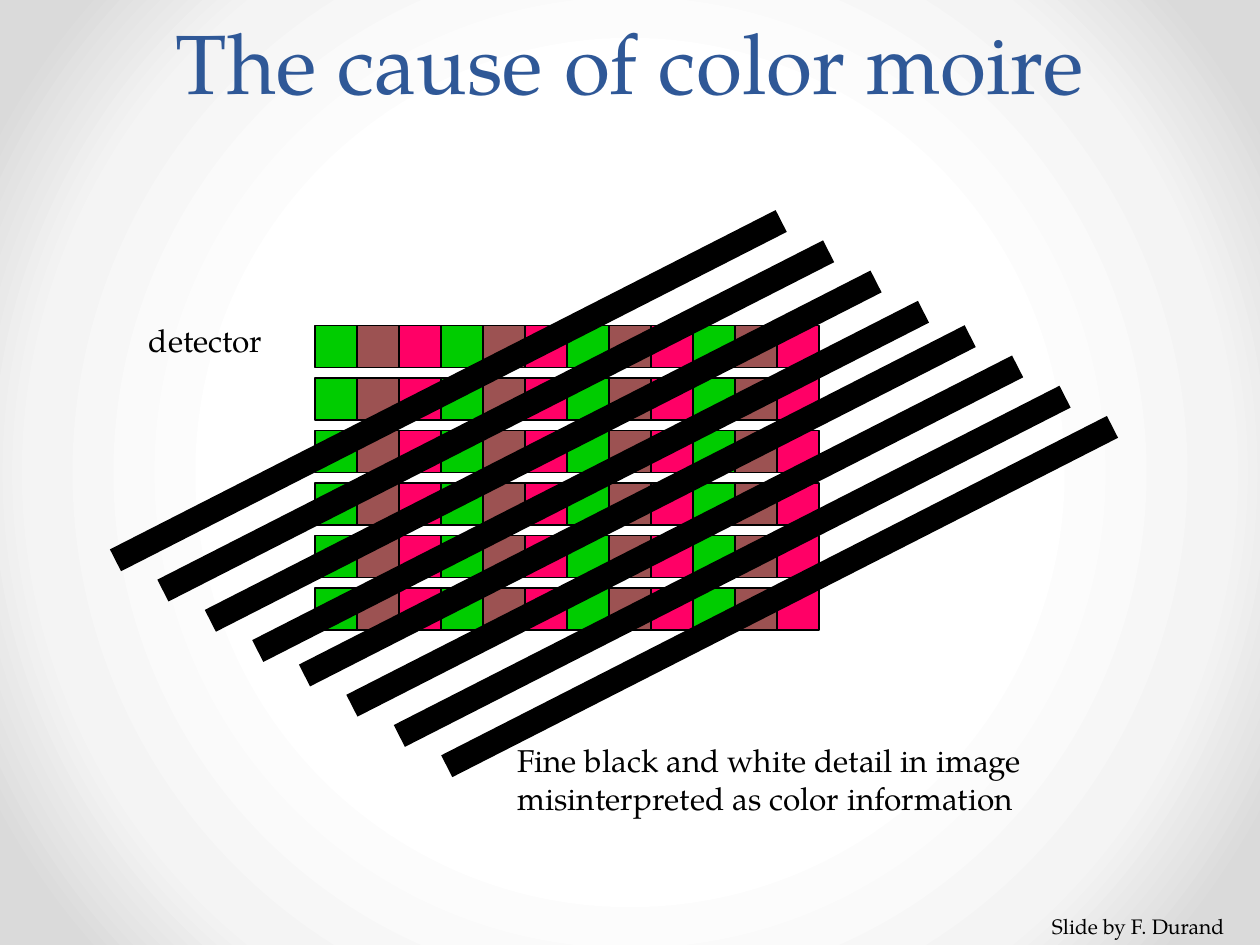
from lxml import etree
from pptx import Presentation
from pptx.dml.color import RGBColor
from pptx.enum.shapes import MSO_CONNECTOR, MSO_SHAPE
from pptx.enum.text import MSO_ANCHOR, MSO_AUTO_SIZE, PP_ALIGN
from pptx.oxml import parse_xml
from pptx.oxml.ns import qn
from pptx.util import Pt

RECT = MSO_SHAPE.RECTANGLE
STRAIGHT = MSO_CONNECTOR.STRAIGHT
BOTTOM = MSO_ANCHOR.BOTTOM
CENTER = PP_ALIGN.CENTER
NO_FIT = MSO_AUTO_SIZE.NONE
GROW = MSO_AUTO_SIZE.SHAPE_TO_FIT_TEXT

BACKGROUND = [(50, "FFFFFF"), (76, "F4F4F4"), (92, "DADADA")]
CELL_COLORS = ["00CC00", "9C5252", "FF0066"]
ROWS, COLS = 6, 12
CELL, ROW_STEP = 24, 30
GRID_LEFT, GRID_TOP = 180, 186
STRIPES_PER_GROUP = 4
STRIPE_STEP = (27.1, 17.28)
STRIPE_SPAN = (380.4, -193.9)


def rgb(value):
    return RGBColor.from_string(value)


class SlideBuilder:
    font = "TeX Gyre Pagella"
    ink = "000000"
    title_color = "2F5897"

    def __init__(self, slide):
        self.slide = slide

    def background(self, stops):
        fill = self.slide.background.fill
        fill.gradient()
        old = self.slide.element.find(".//" + qn("a:gradFill"))
        marks = "".join(
            f'<a:gs pos="{pos * 1000}"><a:srgbClr val="{color}"/></a:gs>'
            for pos, color in stops
        )
        new = parse_xml(
            '<a:gradFill xmlns:a="http://schemas.openxmlformats.org/drawingml/2006/main"'
            f' rotWithShape="1"><a:gsLst>{marks}</a:gsLst><a:path path="circle">'
            '<a:fillToRect l="50000" t="50000" r="50000" b="50000"/></a:path></a:gradFill>'
        )
        old.getparent().replace(old, new)

    def run(self, p, text, size, color):
        r = p.add_run()
        r.text = text
        r.font.name = self.font
        r.font.size = Pt(size)
        r.font.color.rgb = rgb(color)

    def title(self, text, x, y, w, h):
        sp = self.slide.shapes.title
        sp.left, sp.top, sp.width, sp.height = Pt(x), Pt(y), Pt(w), Pt(h)
        tf = sp.text_frame
        tf.auto_size = NO_FIT
        tf.vertical_anchor = BOTTOM
        p = tf.paragraphs[0]
        p.alignment = CENTER
        p.line_spacing = Pt(58)
        self.run(p, text, 48, self.title_color)

    def text(self, lines, x, y, w, h, size=18):
        sp = self.slide.shapes.add_textbox(Pt(x), Pt(y), Pt(w), Pt(h))
        tf = sp.text_frame
        tf.word_wrap = False
        tf.auto_size = GROW
        for i, line in enumerate(lines):
            p = tf.add_paragraph() if i else tf.paragraphs[0]
            self.run(p, line, size, self.ink)

    def cell(self, x, y, color):
        sp = self.slide.shapes.add_shape(RECT, Pt(x), Pt(y), Pt(CELL), Pt(CELL))
        sp.shadow.inherit = False
        sp.fill.solid()
        sp.fill.fore_color.rgb = rgb(color)
        sp.line.color.rgb = rgb(self.ink)
        sp.line.width = Pt(0.75)

    def stripes(self, left, bottom):
        group = self.slide.shapes.add_group_shape()
        dx, dy = STRIPE_SPAN
        for i in range(STRIPES_PER_GROUP):
            x = left + i * STRIPE_STEP[0]
            y = bottom + i * STRIPE_STEP[1]
            line = group.shapes.add_connector(
                STRAIGHT, Pt(x), Pt(y), Pt(x + dx), Pt(y + dy)
            )
            line.line.color.rgb = rgb(self.ink)
            line.line.width = Pt(14)
            etree.SubElement(line.element.spPr, qn("a:effectLst"))


def main():
    prs = Presentation()
    prs.slide_width, prs.slide_height = Pt(720), Pt(540)
    s = SlideBuilder(prs.slides.add_slide(prs.slide_layouts[5]))
    s.background(BACKGROUND)
    s.title("The cause of color moire", 0, 0, 720, 67)
    for row in range(ROWS):
        for col in range(COLS):
            color = CELL_COLORS[col % len(CELL_COLORS)]
            s.cell(GRID_LEFT + col * CELL, GRID_TOP + row * ROW_STEP, color)
    s.stripes(174, 386)
    s.text(["detector"], 78, 180, 101.5, 36)
    s.text(
        ["Fine black and white detail in image", "misinterpreted as color information"],
        288.7, 420, 395.3, 64.8,
    )
    s.stripes(66, 320.2)
    s.text(["Slide by F. Durand"], 594, 518.4, 113.8, 21.6, size=12)
    prs.save("out.pptx")


if __name__ == "__main__":
    main()
